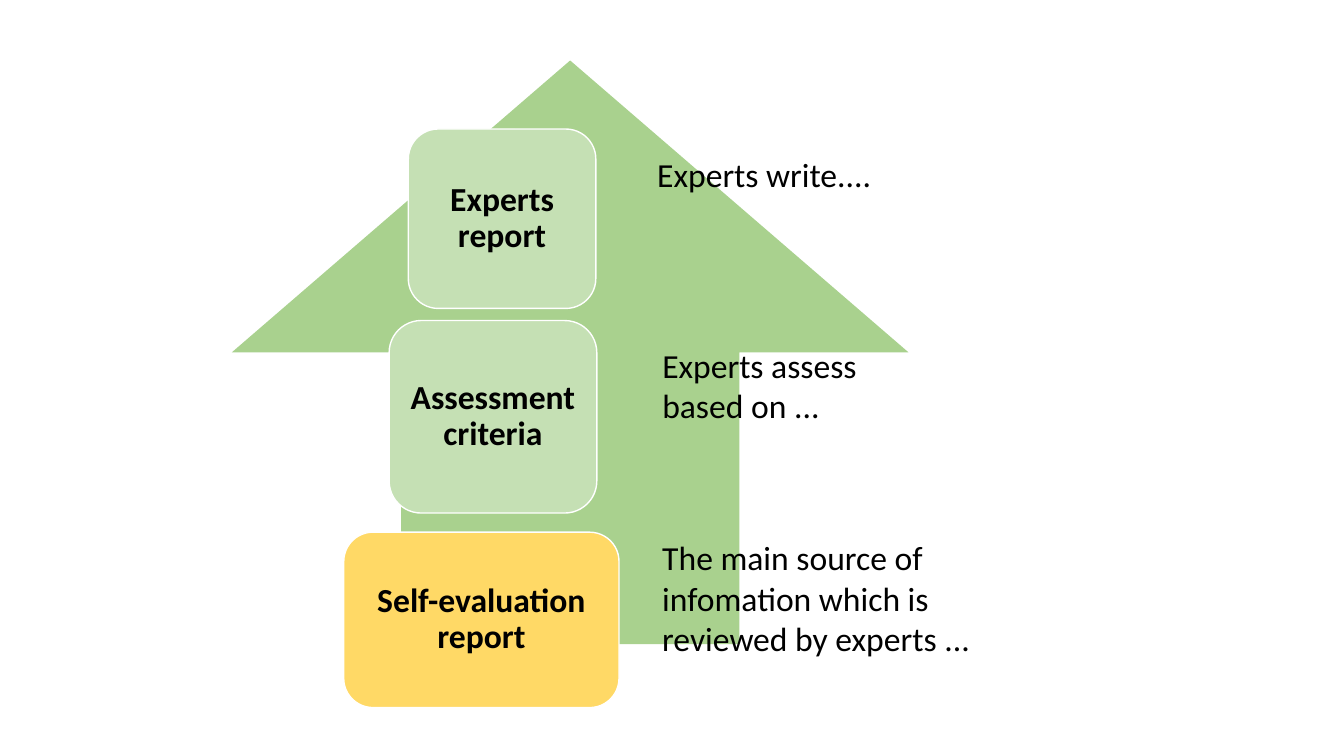
from pptx import Presentation
from pptx.dml.color import RGBColor
from pptx.enum import shapes, text
from pptx.util import Inches, Pt

COLORS = {
    "arrow": "A9D18E",
    "step": "C5E0B4",
    "base": "FFD966",
    "outline": "FFFFFF",
    "text": "000000",
}

STEPS = [
    ("Self-evaluation report", "base", (3.41, 5.28, 2.73, 1.74)),
    ("Assessment criteria", "step", (3.86, 3.18, 2.06, 1.91)),
    ("Experts report", "step", (4.05, 1.28, 1.86, 1.78)),
]

NOTES = [
    ("The main source of infomation which is reviewed by experts ...", (6.47, 5.28, 3.26, 1.31)),
    ("Experts assess based on ...", (6.47, 3.37, 2.88, 0.91)),
    ("Experts write....", (6.42, 1.48, 2.88, 0.5)),
]


def add_filled_shape(kind, box, color):
    shape = slide.shapes.add_shape(kind, *map(Inches, box))
    shape.shadow.inherit = False
    shape.fill.solid()
    shape.fill.fore_color.rgb = RGBColor.from_string(COLORS[color])
    return shape


def write_text(shape, content, frame_format, paragraph_format, bold):
    frame = shape.text_frame
    frame.text = content
    for name, value in frame_format.items():
        setattr(frame, name, value)
    paragraph = frame.paragraphs[0]
    for name, value in paragraph_format.items():
        setattr(paragraph, name, value)
    font = paragraph.runs[0].font
    for name, value in {"name": "Calibri", "size": Pt(24), "bold": bold}.items():
        setattr(font, name, value)
    font.color.rgb = RGBColor.from_string(COLORS["text"])


presentation = Presentation()
presentation.slide_width = Inches(13.33)
presentation.slide_height = Inches(7.5)
slide = presentation.slides.add_slide(presentation.slide_layouts[6])

arrow = add_filled_shape(shapes.MSO_SHAPE.UP_ARROW, (2.3, 0.6, 6.71, 5.79), "arrow")
arrow.line.fill.background()

step_frame = {"word_wrap": True, "vertical_anchor": text.MSO_ANCHOR.MIDDLE}
for side in ("left", "top", "right", "bottom"):
    step_frame[f"margin_{side}"] = Inches(0.1)
step_paragraph = {"alignment": text.PP_ALIGN.CENTER, "line_spacing": 0.9}

for label, color, box in STEPS:
    step = add_filled_shape(shapes.MSO_SHAPE.ROUNDED_RECTANGLE, box, color)
    step.line.color.rgb = RGBColor.from_string(COLORS["outline"])
    step.line.width = Pt(1)
    write_text(step, label, step_frame, step_paragraph, True)

note_frame = {"word_wrap": True, "auto_size": text.MSO_AUTO_SIZE.SHAPE_TO_FIT_TEXT}
for content, box in NOTES:
    note = slide.shapes.add_textbox(*map(Inches, box))
    write_text(note, content, note_frame, {"alignment": text.PP_ALIGN.LEFT}, False)

presentation.save("out.pptx")
